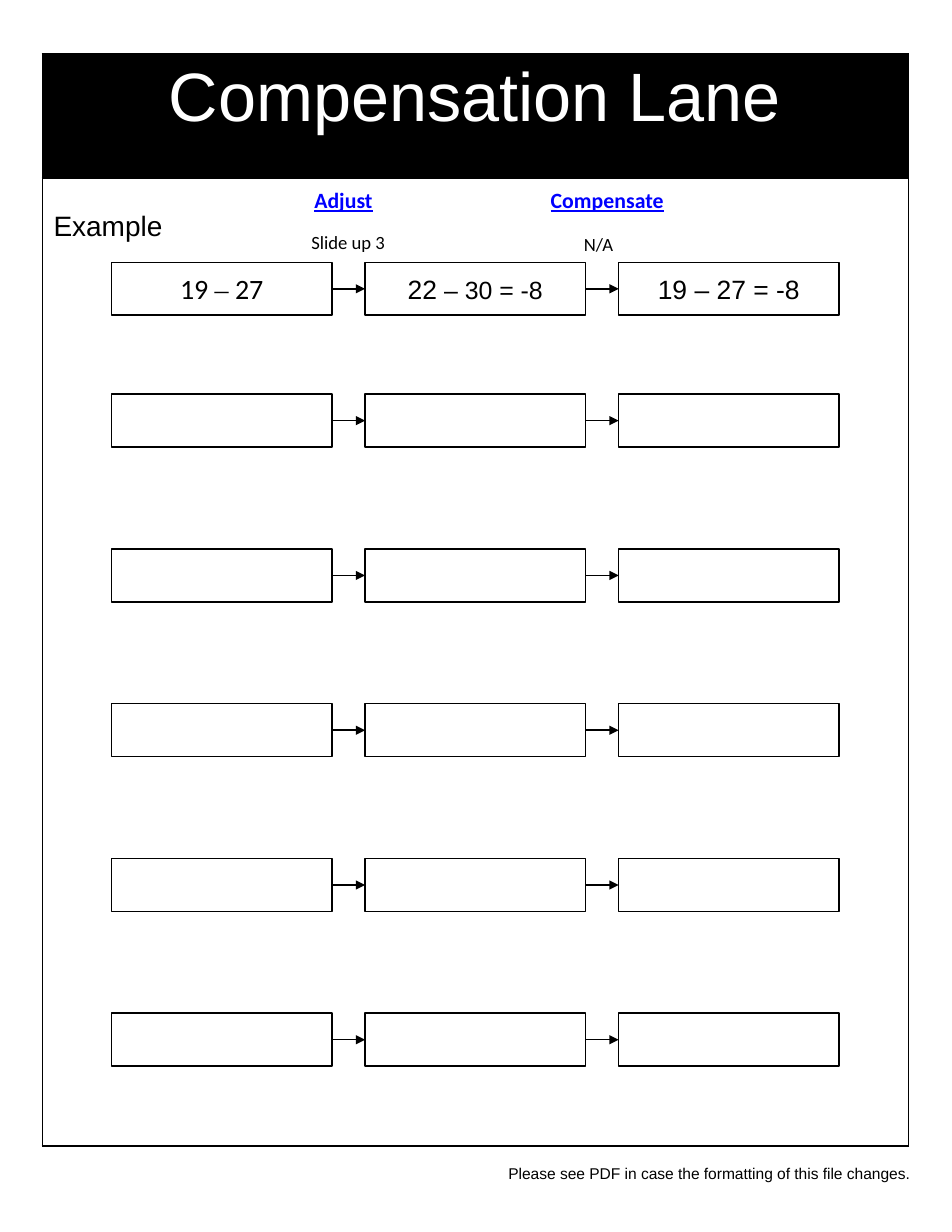
"""Build the Compensation Lane worksheet: an example row and five blank rows of linked boxes."""
from typing import NamedTuple

from lxml.etree import SubElement
from pptx import Presentation
from pptx.dml.color import RGBColor
from pptx.enum.shapes import MSO_CONNECTOR as Link, MSO_SHAPE as Preset
from pptx.enum.text import MSO_ANCHOR as Anchor, PP_ALIGN as Align
from pptx.oxml.ns import qn
from pptx.util import Cm, Pt

BLACK, WHITE, BLUE = "000000", "FFFFFF", "0000FF"
BOX_LEFT, BOX_WIDTH, BOX_HEIGHT, BOX_PITCH = 2.53, 5, 1.2, 5.75
EXAMPLE_TOP, PRACTICE_TOP, ROW_PITCH, PRACTICE_ROWS = 5.95, 8.94, 3.51, 5


class Piece(NamedTuple):
    text: str
    size: float
    font: str = "Arial"


class Label(NamedTuple):
    text: str
    left: float
    top: float
    width: float
    height: float
    size: float
    font: str = "Calibri"
    color: str = BLACK
    heading: bool = False
    inset_left: float = 0.25
    inset_top: float = 0.13
    wrap: bool = True


EXAMPLE = [
    [Piece("19 ", 18, "Calibri"), Piece("–", 18, "Times New Roman"), Piece(" 27", 18, "Calibri")],
    [Piece("22", 17), Piece(" – 30 = -8", 16)],
    [Piece("19 – 27 = -8", 17)],
]
LABELS = [
    Label("Slide up 3", 6.71, 5.11, 3.25, 0.76, 12, inset_left=0.35),
    Label("N/A", 12.7, 5.16, 1.93, 0.76, 12, inset_left=0.54),
    Label("Compensate", 12.24, 3.99, 3.25, 1.12, 14, color=BLUE, heading=True, inset_top=0.25),
    Label("Adjust", 6.88, 3.99, 2.59, 1.12, 14, color=BLUE, heading=True, inset_top=0.25),
    Label("Please see PDF in case the formatting of this file changes.",
          11.28, 26.26, 9.68, 0.69, 10, font="Arial", wrap=False),
]


def rgb(color: str) -> RGBColor:
    return RGBColor.from_string(color)


def write(frame, text: str, *, size: float, font: str = "Arial", color: str = BLACK,
          bold: bool = False, underline: bool = False, align=Align.LEFT) -> None:
    paragraph = frame.paragraphs[0]
    paragraph.alignment = align
    run = paragraph.add_run()
    run.text = text
    run.font.size, run.font.name = Pt(size), font
    run.font.bold, run.font.underline = bold, underline
    run.font.color.rgb = rgb(color)


def outline_cell(cell) -> None:
    properties = cell._tc.get_or_add_tcPr()
    for position, side in enumerate(("lnL", "lnR", "lnT", "lnB")):
        border = SubElement(properties, qn(f"a:{side}"), w=str(Pt(1)))
        fill = SubElement(border, qn("a:solidFill"))
        SubElement(fill, qn("a:srgbClr"), val=BLACK)
        properties.insert(position, border)


def draw_frame(slide) -> None:
    lane = slide.shapes.add_table(2, 1, Cm(0.96), Cm(1.22), Cm(19.64), Cm(24.77)).table
    lane.first_row = lane.horz_banding = False
    lane.rows[0].height, lane.rows[1].height = Cm(2.82), Cm(21.95)
    title, body = lane.cell(0, 0), lane.cell(1, 0)
    title.fill.solid()
    title.fill.fore_color.rgb = rgb(BLACK)
    body.fill.background()
    body.margin_top = Cm(0.75)
    write(title.text_frame, "Compensation Lane", size=44, color=WHITE, align=Align.CENTER)
    write(body.text_frame, "Example", size=18)
    for cell in (title, body):
        outline_cell(cell)


def draw_box(group, left: float, top: float, pieces: list[Piece]):
    box = group.shapes.add_shape(Preset.RECTANGLE, Cm(left), Cm(top), Cm(BOX_WIDTH), Cm(BOX_HEIGHT))
    box.shadow.inherit = False
    box.fill.solid()
    box.fill.fore_color.rgb = rgb(WHITE)
    box.line.color.rgb = rgb(BLACK)
    box.line.width = Pt(1)
    box.text_frame.vertical_anchor = Anchor.MIDDLE
    for piece in pieces:
        write(box.text_frame, piece.text, size=piece.size, font=piece.font, align=Align.CENTER)
    return box


def draw_arrow(group, source, target) -> None:
    middle = source.top + source.height // 2
    arrow = group.shapes.add_connector(
        Link.STRAIGHT, source.left + source.width, middle, target.left, middle)
    arrow.begin_connect(source, 3)
    arrow.end_connect(target, 1)
    arrow.line.color.rgb = rgb(BLACK)
    arrow.line.width = Pt(1)
    SubElement(arrow.line._get_or_add_ln(), qn("a:tailEnd"), type="triangle")
    SubElement(arrow._element.spPr, qn("a:effectLst"))


def draw_row(slide, top: float, contents: list[list[Piece]]) -> None:
    group = slide.shapes.add_group_shape()
    boxes = [draw_box(group, BOX_LEFT + column * BOX_PITCH, top, pieces)
             for column, pieces in enumerate(contents)]
    for source, target in zip(boxes, boxes[1:]):
        draw_arrow(group, source, target)


def draw_label(slide, label: Label) -> None:
    frame = slide.shapes.add_textbox(
        Cm(label.left), Cm(label.top), Cm(label.width), Cm(label.height)).text_frame
    frame.word_wrap = label.wrap
    frame.margin_left, frame.margin_top = Cm(label.inset_left), Cm(label.inset_top)
    write(frame, label.text, size=label.size, font=label.font, color=label.color,
          bold=label.heading, underline=label.heading)


def main() -> None:
    deck = Presentation()
    deck.slide_width, deck.slide_height = Cm(21.59), Cm(27.94)
    slide = deck.slides.add_slide(deck.slide_layouts[6])
    draw_frame(slide)
    for row in range(PRACTICE_ROWS):
        draw_row(slide, PRACTICE_TOP + row * ROW_PITCH, [[], [], []])
    draw_row(slide, EXAMPLE_TOP, EXAMPLE)
    for label in LABELS:
        draw_label(slide, label)
    deck.save("out.pptx")


if __name__ == "__main__":
    main()
